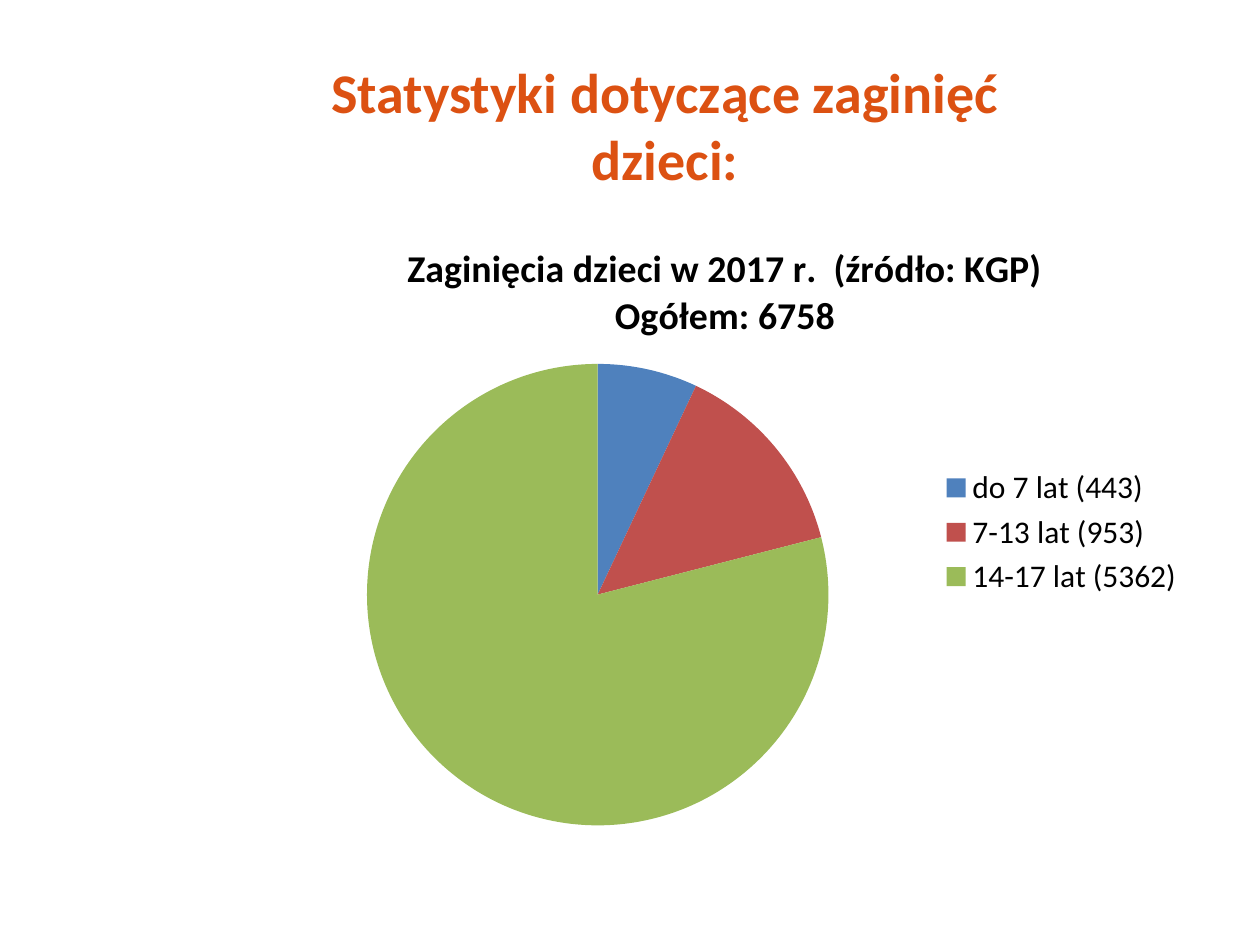
import pptx
import pptx.chart.data
import pptx.dml.color
import pptx.enum.chart
import pptx.enum.text
import pptx.oxml
import pptx.oxml.ns
import pptx.util
from dataclasses import dataclass

Pt = pptx.util.Pt

# Content
HEADING = "Statystyki dotyczące zaginięć dzieci:"
CHART_TITLE = ["Zaginięcia dzieci w 2017 r.  (źródło: KGP)", "Ogółem: 6758"]
AGE_GROUPS = [
    ("do 7 lat (443)", 7),
    ("7-13 lat (953)", 14),
    ("14-17 lat (5362)", 79),
]

# Places in points: left, top, width, height
HEADING_AREA = (180, 28, 400, 86)
CHART_AREA = (144.75, 126, 539.25, 356.4)
PIE_AREA = {"x": 0.12, "y": 0.23, "w": 0.49, "h": 0.74}  # shares of the chart


@dataclass(frozen=True)
class Theme:
    font: str = "Calibri"
    heading: str = "DC5112"
    text: str = "000000"
    slices: tuple = ("4F81BD", "C0504D", "9BBB59")
    heading_size: float = 32
    chart_title_size: float = 21.6
    legend_size: float = 18


THEME = Theme()


def rgb(value):
    return pptx.dml.color.RGBColor.from_string(value)


def format_font(font, size, color=THEME.text, bold=False):
    font.name = THEME.font
    font.size = Pt(size)
    font.bold = bold
    font.color.rgb = rgb(color)


def write_text(frame, lines, size, color=THEME.text, bold=False):
    for index, line in enumerate(lines):
        para = frame.paragraphs[0] if index == 0 else frame.add_paragraph()
        para.alignment = pptx.enum.text.PP_ALIGN.CENTER
        span = para.add_run()
        span.text = line
        format_font(span.font, size, color, bold)


def place_pie(chart, area):
    plot_area = chart.plots[0]._element.getparent()
    for old in plot_area.findall(pptx.oxml.ns.qn("c:layout")):
        plot_area.remove(old)
    modes = '<c:layoutTarget val="inner"/><c:xMode val="edge"/><c:yMode val="edge"/>'
    sizes = "".join(f'<c:{key} val="{value}"/>' for key, value in area.items())
    plot_area.insert(0, pptx.oxml.parse_xml(
        f'<c:layout {pptx.oxml.ns.nsdecls("c")}>'
        f"<c:manualLayout>{modes}{sizes}</c:manualLayout></c:layout>"))


def add_heading(page):
    box = page.shapes.title
    box.left, box.top, box.width, box.height = map(Pt, HEADING_AREA)
    box.text_frame.word_wrap = True
    box.text_frame.vertical_anchor = pptx.enum.text.MSO_ANCHOR.MIDDLE
    write_text(box.text_frame, [HEADING], THEME.heading_size, THEME.heading, bold=True)


def add_pie(page):
    data = pptx.chart.data.CategoryChartData()
    data.categories = [label for label, _ in AGE_GROUPS]
    data.add_series("Series 1", [value for _, value in AGE_GROUPS])
    chart = page.shapes.add_chart(
        pptx.enum.chart.XL_CHART_TYPE.PIE, *map(Pt, CHART_AREA), data).chart
    format_font(chart.font, THEME.legend_size)

    # Title and legend
    chart.has_title = True
    write_text(chart.chart_title.text_frame, CHART_TITLE,
               THEME.chart_title_size, bold=True)
    chart.chart_title.include_in_layout = False
    chart.has_legend = True
    chart.legend.position = pptx.enum.chart.XL_LEGEND_POSITION.RIGHT
    chart.legend.include_in_layout = False
    format_font(chart.legend.font, THEME.legend_size)

    # Slices
    plot = chart.plots[0]
    plot.vary_by_categories = True
    for index, color in enumerate(THEME.slices):
        fill = plot.series[0].points[index].format.fill
        fill.solid()
        fill.fore_color.rgb = rgb(color)
    place_pie(chart, PIE_AREA)


def main():
    deck = pptx.Presentation()
    deck.slide_width, deck.slide_height = Pt(720), Pt(540)
    page = deck.slides.add_slide(deck.slide_layouts.get_by_name("Title Only"))
    add_heading(page)
    add_pie(page)
    deck.save("out.pptx")


if __name__ == "__main__":
    main()
